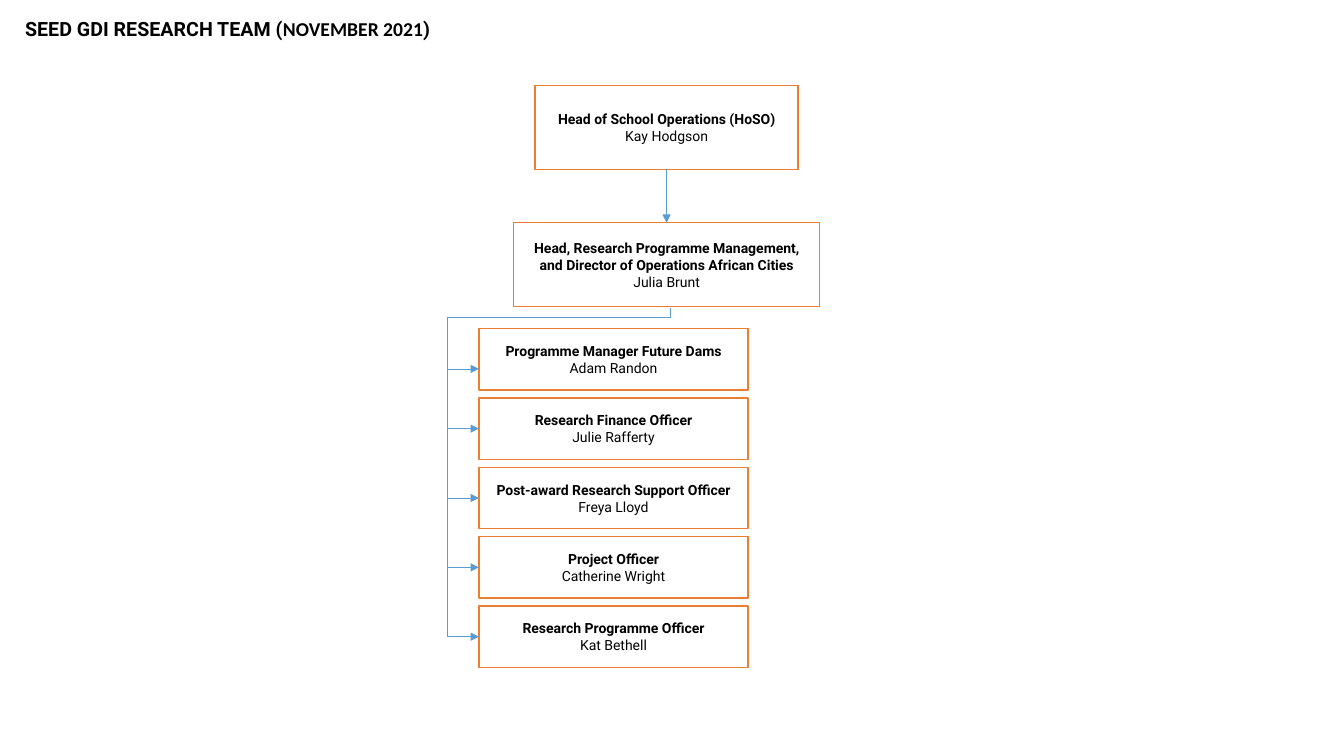
from dataclasses import dataclass

from lxml import etree
from pptx import Presentation
from pptx.dml.color import RGBColor
from pptx.enum.shapes import MSO_CONNECTOR, MSO_SHAPE
from pptx.enum.text import MSO_ANCHOR, PP_ALIGN
from pptx.oxml.ns import qn
from pptx.shapes.autoshape import Shape
from pptx.shapes.connector import Connector
from pptx.slide import Slide
from pptx.text.text import _Paragraph
from pptx.util import Emu, Inches, Pt

RECT = MSO_SHAPE.RECTANGLE
STRAIGHT, ELBOW = MSO_CONNECTOR.STRAIGHT, MSO_CONNECTOR.ELBOW
MIDDLE, CENTER = MSO_ANCHOR.MIDDLE, PP_ALIGN.CENTER
TOP, BOTTOM = 0, 2

BLACK = RGBColor(0x00, 0x00, 0x00)
ORANGE = RGBColor(0xED, 0x7D, 0x31)
BLUE = RGBColor(0x5B, 0x9B, 0xD5)

SLIDE_W, SLIDE_H = Inches(13.33), Inches(7.5)

# Percentages of the slide's width and height
LEAD_CENTER, LEAD_H = 49.6, 11.07
TEAM_LEFT, TEAM_TOP = 35.63, 43.47
TEAM_W, TEAM_H, TEAM_PITCH = 20.03, 8.13, 9.17
TRUNK_X, TRUNK_START_X, TRUNK_START_Y, FIRST_ARROW_Y = 33.3, 49.88, 40.8, 48.8


@dataclass
class Post:
    role: str
    holder: str
    left: float
    top: float
    width: float
    height: float


def lead(role: str, holder: str, top: float, width: float) -> Post:
    """A post centred on the chart's main axis."""
    return Post(role, holder, LEAD_CENTER - width / 2, top, width, LEAD_H)


HEAD_OF_SCHOOL = lead("Head of School Operations (HoSO)", "Kay Hodgson", 11.33, 19.58)
HEAD_OF_RESEARCH = lead(
    "Head, Research Programme Management, and Director of Operations African Cities",
    "Julia Brunt", 29.47, 22.8)
TEAM = [
    Post(role, holder, TEAM_LEFT, TEAM_TOP + i * TEAM_PITCH, TEAM_W, TEAM_H)
    for i, (role, holder) in enumerate([
        ("Programme Manager Future Dams", "Adam Randon"),
        ("Research Finance Officer", "Julie Rafferty"),
        ("Post-award Research Support Officer", "Freya Lloyd"),
        ("Project Officer", "Catherine Wright"),
        ("Research Programme Officer", "Kat Bethell"),
    ])
]


def x(percent: float) -> Emu:
    return Emu(round(SLIDE_W * percent / 100))


def y(percent: float) -> Emu:
    return Emu(round(SLIDE_H * percent / 100))


def add_text(p: _Paragraph, text: str, *, size: float = 10,
             font: str = "Roboto", bold: bool = False) -> None:
    r = p.add_run()
    r.text = text
    r.font.size, r.font.name, r.font.bold = Pt(size), font, bold
    r.font.color.rgb = BLACK


def add_title(slide: Slide) -> None:
    tf = slide.shapes.add_textbox(x(1.13), y(1.6), x(38.7), y(6.67)).text_frame
    tf.word_wrap = True
    for text, font in [("SEED GDI RESEARCH TEAM (", "Roboto"),
                       ("NOVEMBER 2021", "Calibri"), (")", "Roboto")]:
        add_text(tf.paragraphs[0], text, size=14, font=font, bold=True)


def add_post(slide: Slide, post: Post) -> Shape:
    sp = slide.shapes.add_shape(
        RECT, x(post.left), y(post.top), x(post.width), y(post.height))
    sp.shadow.inherit = False
    sp.fill.background()
    sp.line.color.rgb, sp.line.width = ORANGE, Pt(1)
    tf = sp.text_frame
    tf.word_wrap, tf.vertical_anchor = True, MIDDLE
    for p, text, bold in [(tf.paragraphs[0], post.role, True),
                          (tf.add_paragraph(), post.holder, False)]:
        p.alignment = CENTER
        add_text(p, text, bold=bold)
    return sp


def style_arrow(cxn: Connector) -> None:
    cxn.line.color.rgb, cxn.line.width = BLUE, Pt(0.5)
    etree.SubElement(cxn.line._get_or_add_ln(), qn("a:tailEnd"), type="triangle")
    etree.SubElement(cxn._element.spPr, qn("a:effectLst"))


def add_bent_arrow(slide: Slide, left: Emu, top: Emu, right: Emu, bottom: Emu,
                   preset: str, adjustments: tuple[int, ...] = (),
                   **turn: str) -> None:
    """Fill the given area with an elbow arrow turned by a quarter."""
    mid_x, mid_y = (left + right) // 2, (top + bottom) // 2
    half_w, half_h = (bottom - top) // 2, (right - left) // 2
    cxn = slide.shapes.add_connector(
        ELBOW, mid_x - half_w, mid_y - half_h, mid_x + half_w, mid_y + half_h)
    xfrm = cxn._element.spPr.find(qn("a:xfrm"))
    for name, value in turn.items():
        xfrm.set(name, value)
    geom = cxn._element.spPr.find(qn("a:prstGeom"))
    geom.set("prst", preset)
    guides = geom.find(qn("a:avLst"))
    for i, value in enumerate(adjustments, 1):
        etree.SubElement(guides, qn("a:gd"), name=f"adj{i}", fmla=f"val {value}")
    style_arrow(cxn)


def main() -> None:
    prs = Presentation()
    prs.slide_width, prs.slide_height = SLIDE_W, SLIDE_H
    slide = prs.slides.add_slide(prs.slide_layouts[6])

    add_title(slide)
    school = add_post(slide, HEAD_OF_SCHOOL)
    research = add_post(slide, HEAD_OF_RESEARCH)
    for post in TEAM:
        add_post(slide, post)

    cxn = slide.shapes.add_connector(STRAIGHT, 0, 0, 0, 0)
    cxn.begin_connect(school, BOTTOM)
    cxn.end_connect(research, TOP)
    style_arrow(cxn)

    add_bent_arrow(slide, x(TEAM_LEFT), y(TRUNK_START_Y), x(TRUNK_START_X),
                   y(FIRST_ARROW_Y), "bentConnector4", (15400, 116200),
                   rot="5400000")
    start = FIRST_ARROW_Y
    for post in TEAM[1:]:
        end = post.top + post.height / 2
        add_bent_arrow(slide, x(TRUNK_X), y(start), x(TEAM_LEFT), y(end),
                       "bentConnector2", rot="16200000", flipH="1")
        start = end

    prs.save("out.pptx")


if __name__ == "__main__":
    main()
